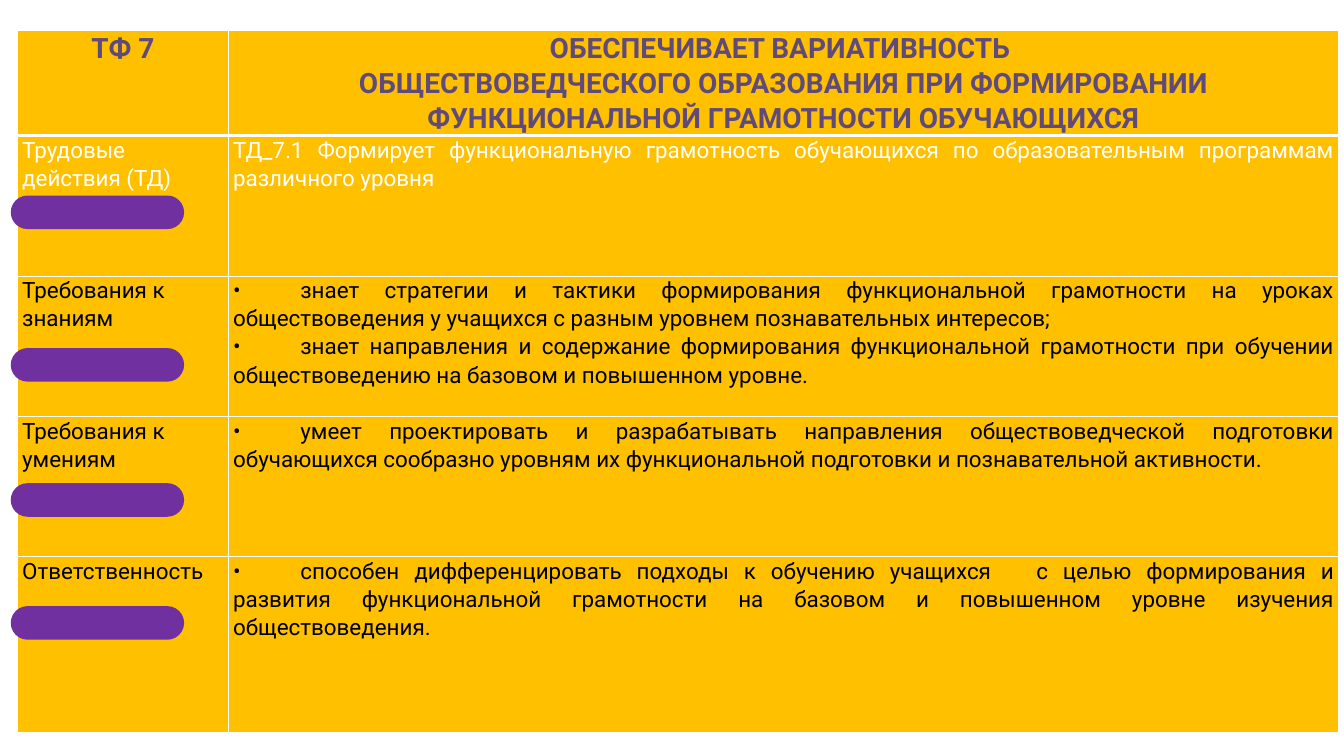
import pptx
import pptx.dml.color
import pptx.enum.shapes
import pptx.enum.text
import pptx.oxml
import pptx.oxml.ns
import pptx.util

Inches = pptx.util.Inches
Pt = pptx.util.Pt
RGBColor = pptx.dml.color.RGBColor
Align = pptx.enum.text.PP_ALIGN

AMBER = RGBColor(0xFF, 0xC0, 0x00)
PLUM = RGBColor(0x60, 0x4A, 0x7B)
PURPLE = RGBColor(0x70, 0x30, 0xA0)
WHITE = RGBColor(0xFF, 0xFF, 0xFF)
BLACK = RGBColor(0x00, 0x00, 0x00)

COLUMN_WIDTHS = [3.14, 16.52]
ROW_HEIGHTS = [1.56, 2.09, 2.09, 2.09, 2.61]
PILL_TOPS = [2.91, 5.18, 7.19, 9.02]
WIDE_GAP = "|"  # stands for one space with extra letter spacing
WIDE_GAP_POINTS = 32

# Each row: label, paragraphs of the description, text colour
ROWS = [
    ("ТФ 7",
     ["ОБЕСПЕЧИВАЕТ ВАРИАТИВНОСТЬ ",
      "ОБЩЕСТВОВЕДЧЕСКОГО ОБРАЗОВАНИЯ ПРИ ФОРМИРОВАНИИ "
      "ФУНКЦИОНАЛЬНОЙ ГРАМОТНОСТИ ОБУЧАЮЩИХСЯ"],
     PLUM),
    ("Трудовые действия (ТД)",
     ["ТД_7.1 Формирует функциональную грамотность обучающихся "
      "по образовательным программам различного уровня"],
     WHITE),
    ("Требования к знаниям",
     ["•\tзнает стратегии и тактики формирования функциональной грамотности "
      "на уроках обществоведения у учащихся с разным уровнем "
      "познавательных интересов;",
      "•\tзнает направления и содержание формирования функциональной "
      "грамотности при обучении обществоведению на базовом и повышенном уровне."],
     BLACK),
    ("Требования к умениям",
     ["•\tумеет проектировать и разрабатывать направления обществоведческой "
      "подготовки обучающихся сообразно уровням их функциональной подготовки "
      "и познавательной активности."],
     BLACK),
    ("Ответственность",
     ["•\tспособен дифференцировать подходы к обучению учащихся|с целью "
      "формирования и развития функциональной грамотности на базовом "
      "и повышенном уровне изучения обществоведения."],
     BLACK),
]


def set_border(cell, side, points):
    """Draw a white line on one side of the cell: L, R, T or B, in this order."""
    line = pptx.oxml.parse_xml(
        f'<a:ln{side} {pptx.oxml.ns.nsdecls("a")} w="{Pt(points)}">'
        f'<a:solidFill><a:srgbClr val="{WHITE}"/></a:solidFill></a:ln{side}>')
    properties = cell._tc.get_or_add_tcPr()
    borders = [child for child in properties if child.tag.startswith(
        pptx.oxml.ns.qn("a:ln"))]
    properties.insert(len(borders), line)


def write_spans(para, text):
    """Fill the paragraph, turning each gap mark into a widened space."""
    for index, piece in enumerate(text.split(WIDE_GAP)):
        if index:
            gap = para.add_run()
            gap.text = " "
            gap.font._element.set("spc", str(WIDE_GAP_POINTS * 100))
        para.add_run().text = piece


deck = pptx.Presentation()
deck.slide_width = Inches(20)
deck.slide_height = Inches(11.25)
page = deck.slides.add_slide(deck.slide_layouts[6])

table = page.shapes.add_table(
    len(ROWS), len(COLUMN_WIDTHS), Inches(0.26), Inches(0.45),
    Inches(sum(COLUMN_WIDTHS)), Inches(sum(ROW_HEIGHTS))).table
table.horz_banding = False
for column, width in zip(table.columns, COLUMN_WIDTHS):
    column.width = Inches(width)

for row_index, (label, description, color) in enumerate(ROWS):
    table.rows[row_index].height = Inches(ROW_HEIGHTS[row_index])
    is_header = row_index == 0
    for column_index, lines in enumerate([[label], description]):
        cell = table.cell(row_index, column_index)
        cell.fill.solid()
        cell.fill.fore_color.rgb = AMBER
        cell.margin_left = cell.margin_right = Inches(0.07)
        cell.margin_top = cell.margin_bottom = 0
        for side in "LRTB":
            thick = (is_header and side == "B") or (row_index == 1 and side == "T")
            set_border(cell, side, 3 if thick else 1)

        frame = cell.text_frame
        for line_index, line in enumerate(lines):
            para = frame.add_paragraph() if line_index else frame.paragraphs[0]
            write_spans(para, line)
            if is_header:
                para.alignment = Align.CENTER
            else:
                para.alignment = Align.JUSTIFY if column_index else Align.LEFT
            para.line_spacing = 1.07
            if "\t" in line:
                para._p.get_or_add_pPr().append(pptx.oxml.parse_xml(
                    f'<a:tabLst {pptx.oxml.ns.nsdecls("a")}>'
                    f'<a:tab pos="{Inches(1)}" algn="l"/></a:tabLst>'))
            para.font.name = "Roboto"
            para.font.size = Pt(30 if is_header else 24)
            para.font.bold = is_header
            para.font.color.rgb = color

for top in PILL_TOPS:
    pill = page.shapes.add_shape(
        pptx.enum.shapes.MSO_SHAPE.ROUNDED_RECTANGLE,
        Inches(0.16), Inches(top), Inches(2.58), Inches(0.5))
    pill.adjustments[0] = 0.5
    pill.shadow.inherit = False
    pill.fill.solid()
    pill.fill.fore_color.rgb = PURPLE
    pill.line.fill.background()

deck.save("out.pptx")
